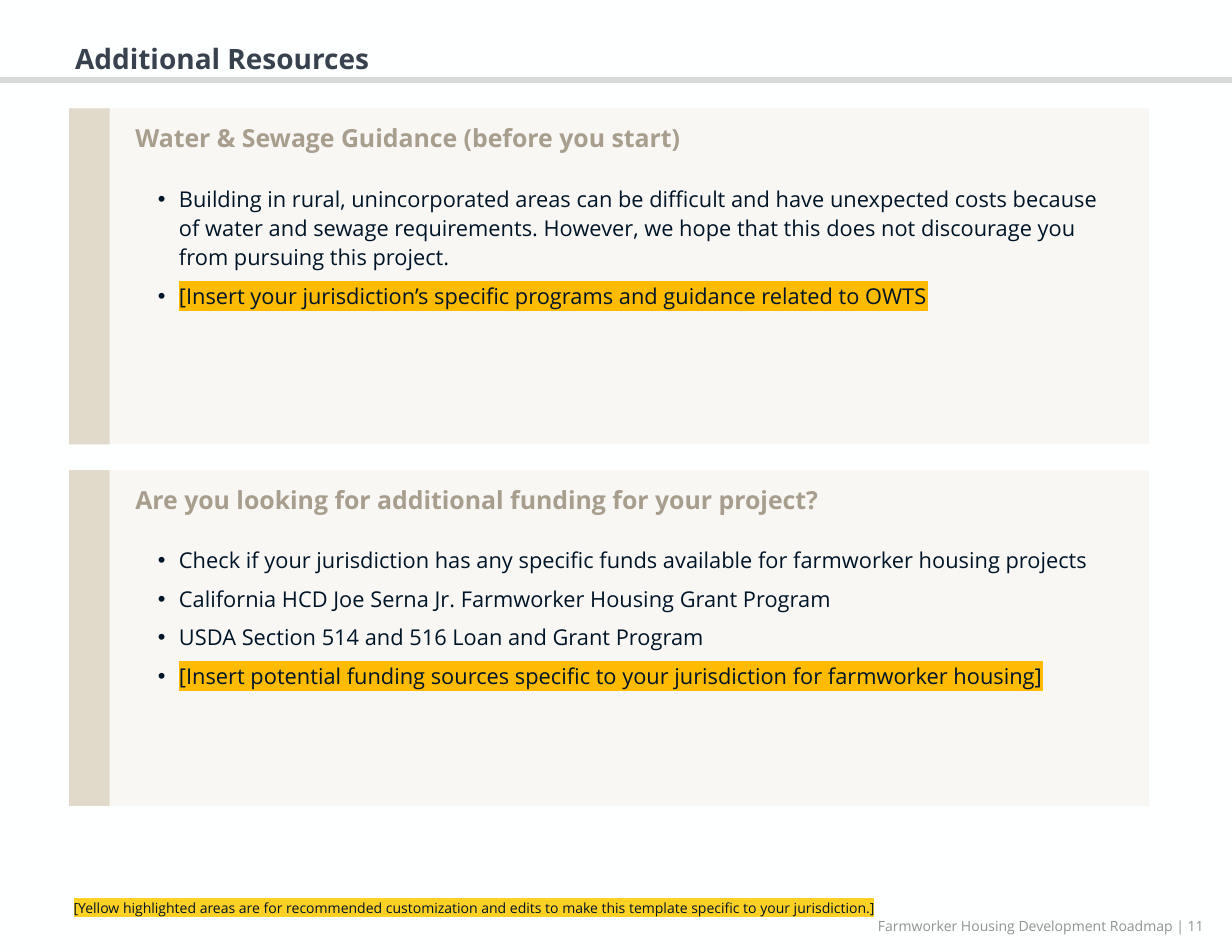
from lxml import etree
from pptx import Presentation
from pptx import util as u
from pptx.dml.color import RGBColor
from pptx.enum import shapes, text
from pptx.oxml.ns import qn

colors = {
    "background": "FEFFFF", "title": "38424E", "rule": "D9D9D9", "sand": "E1D9CA",
    "heading": "A89E8E", "body": "001427", "amber": "FFBB00", "yellow": "FFD124",
    "footer": "929292",
}
styles = {
    "title": {"size": u.Pt(18), "bold": True},
    "heading": {"size": u.Pt(16), "bold": True},
    "body": {"size": u.Pt(14), "bold": False},
    "note": {"size": u.Pt(9), "bold": False},
}
bullet_spacing = {"line_spacing": u.Pt(18.8), "space_after": u.Pt(6)}
frame_format = {"word_wrap": True, "auto_size": text.MSO_AUTO_SIZE.NONE}


def add_bar(left, top, width, height, color, opacity=100):
    shape = slide.shapes.add_shape(
        shapes.MSO_SHAPE.RECTANGLE, u.Cm(left), u.Cm(top), u.Cm(width), u.Cm(height))
    shape.shadow.inherit = False
    shape.line.fill.background()
    shape.fill.solid()
    shape.fill.fore_color.rgb = RGBColor.from_string(colors[color])
    if opacity < 100:
        fill_color = shape.fill._xPr.find(qn("a:solidFill"))[0]
        etree.SubElement(fill_color, qn("a:alpha"), val=str(opacity * 1000))


def write(shape, box, lines, style, color, bullets=False):
    shape.left, shape.top, shape.width, shape.height = [u.Cm(value) for value in box]
    frame = shape.text_frame
    for name, value in frame_format.items():
        setattr(frame, name, value)
    for index, (line, highlight) in enumerate(lines):
        paragraph = frame.add_paragraph() if index else frame.paragraphs[0]
        paragraph.alignment = text.PP_ALIGN.LEFT
        run = paragraph.add_run()
        run.text = line
        run.font.name = "Open Sans"
        for name, value in styles[style].items():
            setattr(run.font, name, value)
        run.font.color.rgb = RGBColor.from_string(colors[color])
        if highlight:
            mark = etree.Element(qn("a:highlight"))
            etree.SubElement(mark, qn("a:srgbClr"), val=colors[highlight])
            run.font._element.find(qn("a:solidFill")).addnext(mark)
        if bullets:
            for name, value in bullet_spacing.items():
                setattr(paragraph, name, value)
            properties = paragraph._p.get_or_add_pPr()
            properties.set("marL", str(u.Cm(0.48)))
            properties.set("indent", str(-u.Cm(0.48)))
            etree.SubElement(properties, qn("a:buFont"), typeface="Arial")
            etree.SubElement(properties, qn("a:buChar"), char="•")


presentation = Presentation()
presentation.slide_width = u.Cm(27.94)
presentation.slide_height = u.Cm(21.59)
slide = presentation.slides.add_slide(presentation.slide_layouts[5])
slide.background.fill.solid()
slide.background.fill.fore_color.rgb = RGBColor.from_string(colors["background"])

title = slide.shapes.title
title.text_frame.vertical_anchor = text.MSO_ANCHOR.MIDDLE
write(title, (1.45, 0.81, 23.06, 1.02), [("Additional Resources", None)], "title", "title")
add_bar(0, 1.75, 27.94, 0.13, "rule")

panels = [
    ("Water & Sewage Guidance (before you start)", 3.15, [
        ("Building in rural, unincorporated areas can be difficult and have unexpected costs "
         "because of water and sewage requirements. However, we hope that this does not "
         "discourage you from pursuing this project.", None),
        ("[Insert your jurisdiction’s specific programs and guidance related to OWTS", "amber"),
    ]),
    ("Are you looking for additional funding for your project?", 3.56, [
        ("Check if your jurisdiction has any specific funds available for farmworker housing "
         "projects", None),
        ("California HCD Joe Serna Jr. Farmworker Housing Grant Program", None),
        ("USDA Section 514 and 516 Loan and Grant Program", None),
        ("[Insert potential funding sources specific to your jurisdiction for farmworker "
         "housing]", "amber"),
    ]),
]
for index, (heading, height, items) in enumerate(panels):
    top = 2.46 + index * 8.2
    add_bar(1.57, top, 24.49, 7.62, "sand", opacity=20)
    add_bar(1.57, top, 0.92, 7.62, "sand")
    write(slide.shapes.add_textbox(0, 0, 0, 0), (2.82, top + 0.2, 23.5, 0.94),
          [(heading, None)], "heading", "heading")
    write(slide.shapes.add_textbox(0, 0, 0, 0), (3.33, top + 1.55, 22.23, height),
          items, "body", "body", bullets=True)

write(slide.shapes.add_textbox(0, 0, 0, 0), (1.42, 20.27, 25.76, 0.64),
      [("[Yellow highlighted areas are for recommended customization and edits to make this "
        "template specific to your jurisdiction.]", "yellow")], "note", "body")
write(slide.shapes.add_textbox(0, 0, 0, 0), (19.66, 20.68, 8.23, 0.64),
      [("Farmworker Housing Development Roadmap | 11", None)], "note", "footer")

presentation.save("out.pptx")
